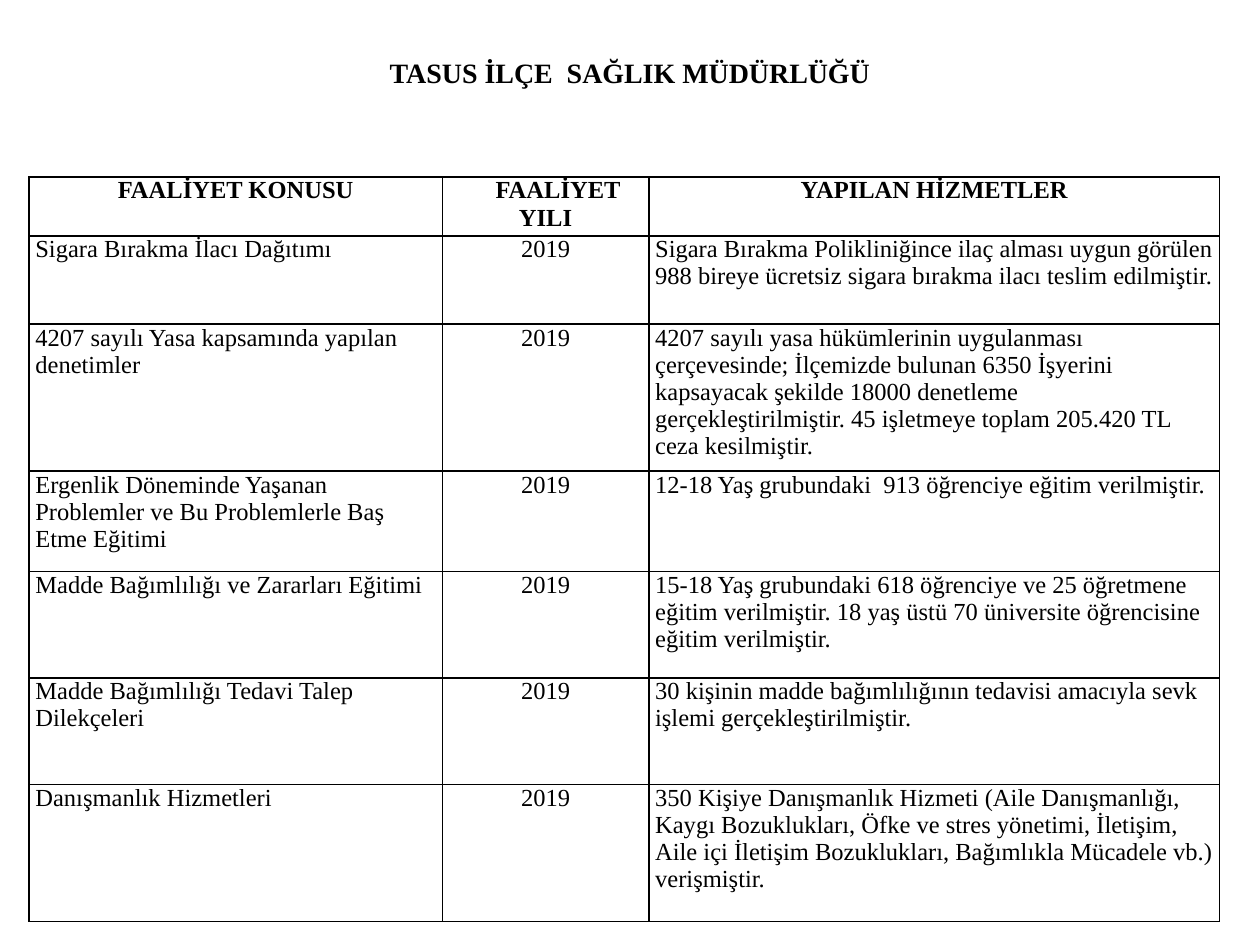
from lxml import etree
from pptx import Presentation
from pptx.dml.color import RGBColor
from pptx.enum.text import MSO_ANCHOR, MSO_AUTO_SIZE, PP_ALIGN
from pptx.oxml.ns import qn
from pptx.util import Pt

BLACK = RGBColor(0, 0, 0)
WHITE = RGBColor(255, 255, 255)
LEFT, CENTER = PP_ALIGN.LEFT, PP_ALIGN.CENTER
MIDDLE, TOP = MSO_ANCHOR.MIDDLE, MSO_ANCHOR.TOP
NO_FIT = MSO_AUTO_SIZE.NONE
FACE = "Times New Roman"

TITLE = "TASUS İLÇE  SAĞLIK MÜDÜRLÜĞÜ"
YEAR = "2019"
HEADS = ("FAALİYET KONUSU", "FAALİYET YILI", "YAPILAN HİZMETLER")
WORKS = [
    ("Sigara Bırakma İlacı Dağıtımı",
     "Sigara Bırakma Polikliniğince ilaç alması uygun görülen 988 bireye "
     "ücretsiz sigara bırakma ilacı teslim edilmiştir."),
    ("4207 sayılı Yasa kapsamında yapılan denetimler",
     "4207 sayılı yasa hükümlerinin uygulanması çerçevesinde; İlçemizde "
     "bulunan 6350 İşyerini kapsayacak şekilde 18000 denetleme "
     "gerçekleştirilmiştir. 45 işletmeye toplam 205.420 TL ceza kesilmiştir."),
    ("Ergenlik Döneminde Yaşanan Problemler ve Bu Problemlerle Baş Etme Eğitimi",
     "12-18 Yaş grubundaki  913 öğrenciye eğitim verilmiştir."),
    ("Madde Bağımlılığı ve Zararları Eğitimi",
     "15-18 Yaş grubundaki 618 öğrenciye ve 25 öğretmene eğitim verilmiştir. "
     "18 yaş üstü 70 üniversite öğrencisine eğitim verilmiştir."),
    ("Madde Bağımlılığı Tedavi Talep Dilekçeleri",
     "30 kişinin madde bağımlılığının tedavisi amacıyla sevk işlemi "
     "gerçekleştirilmiştir."),
    ("Danışmanlık Hizmetleri",
     "350 Kişiye Danışmanlık Hizmeti (Aile Danışmanlığı, Kaygı Bozuklukları, "
     "Öfke ve stres yönetimi, İletişim, Aile içi İletişim Bozuklukları, "
     "Bağımlıkla Mücadele vb.) verişmiştir."),
]
ROWS = [HEADS] + [(topic, YEAR, result) for topic, result in WORKS]
WIDTHS = (236.2, 118, 326.2)
HEIGHTS = (33.7, 50.4, 84, 57.2, 61, 60.8, 78.4)
TABLE_X, TABLE_Y = 16.6, 101.2
INDENT = 14
PAD = {"margin_left": Pt(3.6), "margin_right": Pt(3.6),
       "margin_top": 0, "margin_bottom": 0, "vertical_anchor": TOP}


def assign(item, values):
    for name, value in values.items():
        setattr(item, name, value)


def write(frame, text, size, bold, align):
    par = frame.paragraphs[0]
    par.alignment = align
    run = par.add_run()
    run.text = text
    assign(run.font, {"name": FACE, "size": Pt(size), "bold": bold})
    run.font.color.rgb = BLACK
    return par


def border(cell):
    """Draw a 1 pt black line on all four sides."""
    props = cell._tc.get_or_add_tcPr()
    for spot, side in enumerate(("lnL", "lnR", "lnT", "lnB")):
        line = etree.Element(qn("a:" + side), w=str(Pt(1)))
        fill = etree.SubElement(line, qn("a:solidFill"))
        etree.SubElement(fill, qn("a:srgbClr"), val=str(BLACK))
        props.insert(spot, line)


deck = Presentation()
assign(deck, {"slide_width": Pt(720), "slide_height": Pt(540)})
slide = deck.slides.add_slide(deck.slide_layouts[5])

title = slide.shapes.title
assign(title, {"left": 0, "top": Pt(28), "width": Pt(720), "height": Pt(26.6)})
assign(title.text_frame, {"auto_size": NO_FIT, "word_wrap": True,
                          "vertical_anchor": MIDDLE})
write(title.text_frame, TITLE, 16, True, CENTER)

table = slide.shapes.add_table(
    len(ROWS), len(WIDTHS), Pt(TABLE_X), Pt(TABLE_Y),
    Pt(sum(WIDTHS)), Pt(sum(HEIGHTS))).table
for col, width in zip(table.columns, WIDTHS):
    col.width = Pt(width)
for r, (texts, height) in enumerate(zip(ROWS, HEIGHTS)):
    table.rows[r].height = Pt(height)
    for c, text in enumerate(texts):
        cell = table.cell(r, c)
        assign(cell, PAD)
        cell.fill.solid()
        cell.fill.fore_color.rgb = WHITE
        border(cell)
        head = r == 0
        par = write(cell.text_frame, text, 14, head,
                    CENTER if head or c == 1 else LEFT)
        if head and c == 1:
            par._p.get_or_add_pPr().set("indent", str(Pt(INDENT)))

deck.save("out.pptx")
